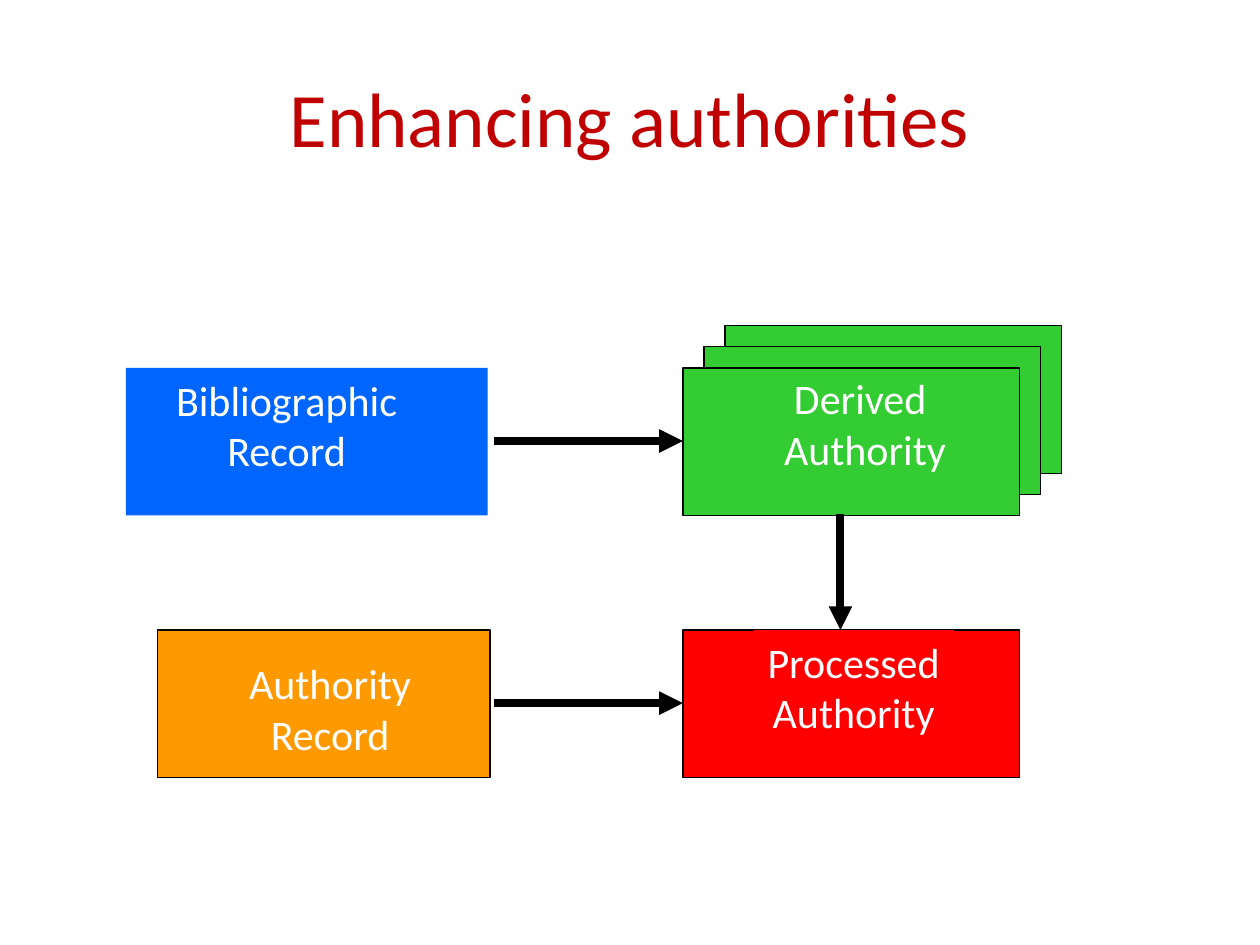
from dataclasses import dataclass

from lxml.etree import SubElement
from pptx import Presentation
from pptx.dml.color import RGBColor
from pptx.enum.shapes import MSO_CONNECTOR, MSO_SHAPE
from pptx.enum.text import MSO_ANCHOR, PP_ALIGN
from pptx.oxml.ns import qn
from pptx.util import Inches, Pt


@dataclass(frozen=True)
class Theme:
    font: str = "Calibri"
    title_size: int = 44
    label_size: int = 24
    border_width: float = 0.75
    arrow_width: float = 4.5
    title: str = "C00000"
    label: str = "FFFFFF"
    line: str = "000000"
    blue: str = "0066FF"
    green: str = "33CC33"
    orange: str = "FF9900"
    red: str = "FF0000"


THEME = Theme()
BOX_HEIGHT = 1.17
LABEL_HEIGHT = 0.91
STACK_STEP = 0.167
STACK_SIZE = 3

TITLE = ("Enhancing authorities", (0.5, 0.3, 9, 1.25))

# Label areas are (left, top, width); the red label covers part of its box's border.
BOXES = [
    dict(lines=["Bibliographic", "Record"], left=1, top=2.92, width=2.87,
         color=THEME.blue, border=False, label=(0.83, 2.92, 2.89)),
    dict(lines=["Derived ", "Authority"], left=5.42, top=2.92, width=2.67,
         color=THEME.green, copies=STACK_SIZE, label=(5.87, 2.91, 1.99)),
    dict(lines=["Authority", "Record"], left=1.25, top=5, width=2.64,
         color=THEME.orange, label=(1.58, 5.17, 2.08)),
    dict(lines=["Processed", "Authority"], left=5.42, top=5, width=2.67,
         color=THEME.red, label=(5.98, 5, 1.59), label_fill=True),
]

ARROWS = [
    ((3.92, 3.5), (5.42, 3.5)),
    ((6.67, 4.08), (6.67, 5)),
    ((3.92, 5.58), (5.42, 5.58)),
]


def rgb(color):
    return RGBColor.from_string(color)


def add_text(slide, lines, area, size, color, anchor, wrap=True):
    text_box = slide.shapes.add_textbox(*map(Inches, area))
    frame = text_box.text_frame
    frame.word_wrap = wrap
    frame.vertical_anchor = anchor
    frame.text = "\n".join(lines)
    for paragraph in frame.paragraphs:
        paragraph.alignment = PP_ALIGN.CENTER
        paragraph.font.name = THEME.font
        paragraph.font.size = Pt(size)
        paragraph.font.color.rgb = rgb(color)
    return text_box


def add_rectangle(slide, left, top, width, color, border):
    shape = slide.shapes.add_shape(
        MSO_SHAPE.RECTANGLE, *map(Inches, (left, top, width, BOX_HEIGHT)))
    shape.shadow.inherit = False
    shape.fill.solid()
    shape.fill.fore_color.rgb = rgb(color)
    if border:
        shape.line.color.rgb = rgb(THEME.line)
        shape.line.width = Pt(THEME.border_width)
    else:
        shape.line.fill.background()


def add_box(slide, lines, left, top, width, color, label,
            border=True, copies=1, label_fill=False):
    """Draw a labelled box, with any copies stepping up and right behind it."""
    for step in reversed(range(copies)):
        offset = step * STACK_STEP
        add_rectangle(slide, left + offset, top - offset, width, color, border)
    text_box = add_text(slide, lines, (*label, LABEL_HEIGHT), THEME.label_size,
                        THEME.label, MSO_ANCHOR.TOP, wrap=False)
    if label_fill:
        text_box.fill.solid()
        text_box.fill.fore_color.rgb = rgb(color)


def add_arrow(slide, start, end):
    arrow = slide.shapes.add_connector(
        MSO_CONNECTOR.STRAIGHT, *map(Inches, (*start, *end)))
    arrow.line.color.rgb = rgb(THEME.line)
    arrow.line.width = Pt(THEME.arrow_width)
    SubElement(arrow.line._get_or_add_ln(), qn("a:tailEnd"), type="triangle")
    SubElement(arrow._element.spPr, qn("a:effectLst"))


def main():
    presentation = Presentation()
    presentation.slide_width = Inches(10)
    presentation.slide_height = Inches(7.5)
    slide = presentation.slides.add_slide(presentation.slide_layouts[6])

    title, area = TITLE
    add_text(slide, [title], area, THEME.title_size, THEME.title, MSO_ANCHOR.MIDDLE)
    for box in BOXES:
        add_box(slide, **box)
    for start, end in ARROWS:
        add_arrow(slide, start, end)

    presentation.save("out.pptx")


if __name__ == "__main__":
    main()
